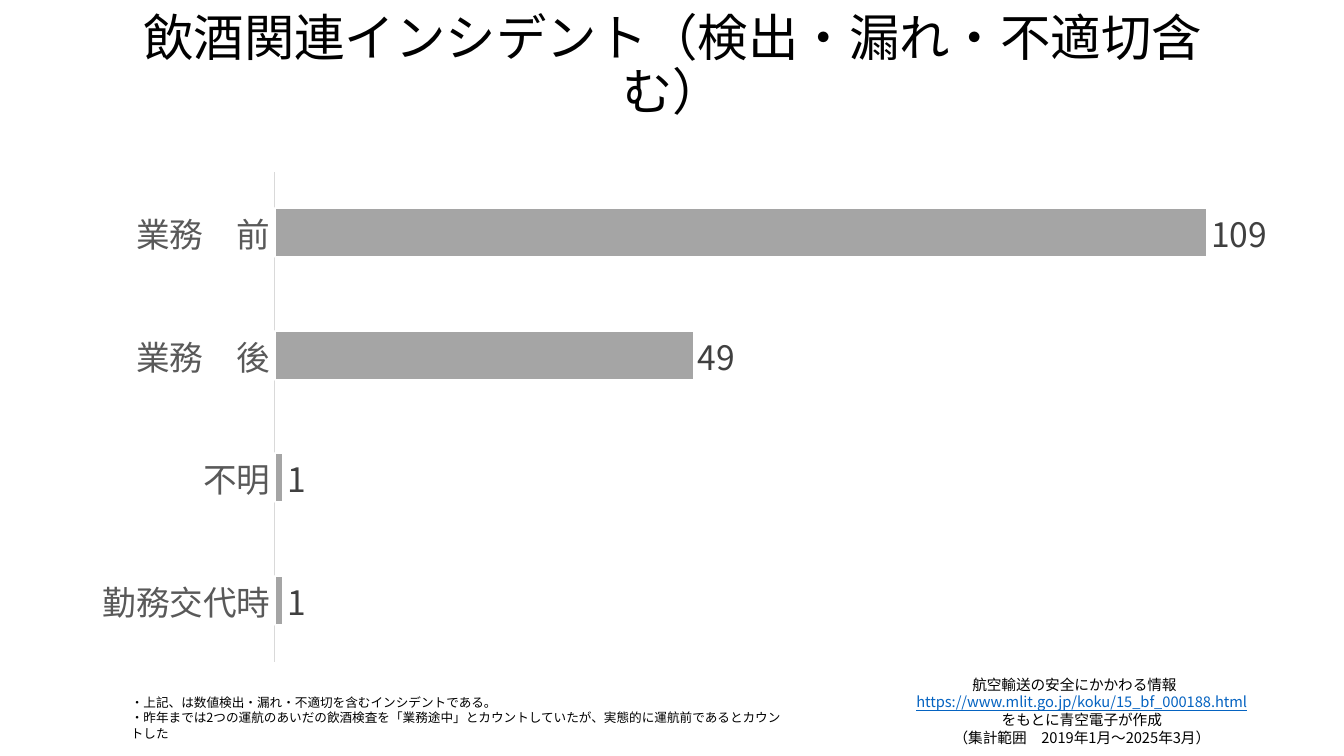
import pptx
import pptx.chart.data
import pptx.dml.color
import pptx.enum.chart
import pptx.enum.text
import pptx.oxml
import pptx.oxml.ns
import pptx.util
from lxml import etree

FONT = "Noto Sans CJK JP"
COLORS = {"text": "000000", "link": "0563C1", "bar": "A5A5A5", "edge": "FFFFFF",
          "category": "595959", "value": "404040", "axis": "D9D9D9"}
SLIDE_WIDTH, SLIDE_HEIGHT = 13.33, 7.5

# Each paragraph is a list of (text, colour) runs; None is a line break.
TITLE = [[("飲酒関連インシデント（検出・漏れ・不適切含む）", "text")]]
SOURCE = [
    [("航空輸送の安全にかかわる情報\u3000", "text")],
    [("https://www.mlit.go.jp/koku/15_bf_000188.html", "link"), None,
     ("をもとに青空電子が作成", "text")],
    [("（集計範囲\u30002019年1月～2025年3月）", "text")],
]
NOTES = [[
    ("・上記、は数値検出・漏れ・不適切を含むインシデントである。", "text"), None,
    ("・昨年までは2つの運航のあいだの飲酒検査を「業務途中」とカウントしていたが、"
     "実態的に運航前であるとカウントした", "text"),
]]
INCIDENTS = {"勤務交代時": 1, "不明": 1, "業務\u3000後": 49, "業務\u3000前": 109}
VALUE_MAXIMUM = 120

# Left, top, width and height as shares of the slide.
TITLE_BOX = (0.069, 0.029, 0.863, 0.12)
CHART_BOX = (0.053, 0.205, 0.934, 0.689)
SOURCE_BOX = (0.555, 0.887, 0.5, 0.108)
NOTES_BOX = (0.09, 0.913, 0.5, 0.053)
# Inner plot area as shares of the chart.
PLOT_AREA = {"x": 0.162, "y": 0.032, "w": 0.818, "h": 0.941}


def rgb(name):
    return pptx.dml.color.RGBColor.from_string(COLORS[name])


def place(box):
    sizes = (SLIDE_WIDTH, SLIDE_HEIGHT) * 2
    return [pptx.util.Inches(share * size) for share, size in zip(box, sizes)]


def style_font(font, size, color):
    font.name = FONT
    font.size = pptx.util.Pt(size)
    font.color.rgb = rgb(color)


def add_text(slide, box, paragraphs, size, align, anchor, spacing=None):
    frame = slide.shapes.add_textbox(*place(box)).text_frame
    frame.word_wrap = True
    frame.vertical_anchor = anchor
    for index, pieces in enumerate(paragraphs):
        paragraph = frame.add_paragraph() if index else frame.paragraphs[0]
        paragraph.alignment = align
        paragraph.line_spacing = spacing
        for piece in pieces:
            if piece is None:
                paragraph.add_line_break()
                continue
            run = paragraph.add_run()
            run.text, color = piece
            style_font(run.font, size, color)
            if color == "link":
                run.font.underline = True
            latin = run.font._element.find(pptx.oxml.ns.qn("a:latin"))
            east_asian = etree.Element(pptx.oxml.ns.qn("a:ea"), typeface=FONT)
            latin.addnext(east_asian)


def fix_plot_area(chart):
    """Pin the inner plot area to PLOT_AREA."""
    plot_area = chart._chartSpace.chart.plotArea
    for old in plot_area.findall(pptx.oxml.ns.qn("c:layout")):
        plot_area.remove(old)
    layout = etree.Element(pptx.oxml.ns.qn("c:layout"))
    manual = etree.SubElement(layout, pptx.oxml.ns.qn("c:manualLayout"))
    settings = [("layoutTarget", "inner"), ("xMode", "edge"), ("yMode", "edge")]
    for tag, value in settings + list(PLOT_AREA.items()):
        etree.SubElement(manual, pptx.oxml.ns.qn("c:" + tag), val=str(value))
    plot_area.insert(0, layout)


def add_incident_chart(slide):
    data = pptx.chart.data.CategoryChartData()
    data.categories = list(INCIDENTS)
    data.add_series("Series 1", list(INCIDENTS.values()))
    chart = slide.shapes.add_chart(
        pptx.enum.chart.XL_CHART_TYPE.BAR_CLUSTERED, *place(CHART_BOX), data).chart
    chart.has_legend = False
    chart.has_title = False
    style_font(chart.font, 10, "text")

    category_axis = chart.category_axis
    category_axis.major_tick_mark = pptx.enum.chart.XL_TICK_MARK.NONE
    category_axis.has_major_gridlines = False
    category_axis.format.line.color.rgb = rgb("axis")
    category_axis.format.line.width = pptx.util.Pt(0.75)
    style_font(category_axis.tick_labels.font, 24, "category")

    value_axis = chart.value_axis
    value_axis.minimum_scale, value_axis.maximum_scale = 0, VALUE_MAXIMUM
    value_axis.has_major_gridlines = False
    value_axis.visible = False

    plot = chart.plots[0]
    plot.gap_width, plot.overlap = 150, -25
    plot.vary_by_categories = False
    bars = plot.series[0]
    bars.format.fill.solid()
    bars.format.fill.fore_color.rgb = rgb("bar")
    bars.format.line.color.rgb = rgb("edge")
    bars.format.line.width = pptx.util.Pt(1.5)
    labels = bars.data_labels
    labels.show_value = True
    labels.position = pptx.enum.chart.XL_LABEL_POSITION.OUTSIDE_END
    style_font(labels.font, 24, "value")
    fix_plot_area(chart)


def main():
    presentation = pptx.Presentation()
    presentation.slide_width = pptx.util.Inches(SLIDE_WIDTH)
    presentation.slide_height = pptx.util.Inches(SLIDE_HEIGHT)
    slide = presentation.slides.add_slide(presentation.slide_layouts[6])
    align, anchor = pptx.enum.text.PP_ALIGN, pptx.enum.text.MSO_ANCHOR
    add_text(slide, TITLE_BOX, TITLE, 36, align.CENTER, anchor.MIDDLE, 0.9)
    add_incident_chart(slide)
    add_text(slide, SOURCE_BOX, SOURCE, 10.5, align.CENTER, anchor.TOP)
    add_text(slide, NOTES_BOX, NOTES, 9, align.LEFT, anchor.TOP)
    presentation.save("out.pptx")


if __name__ == "__main__":
    main()
